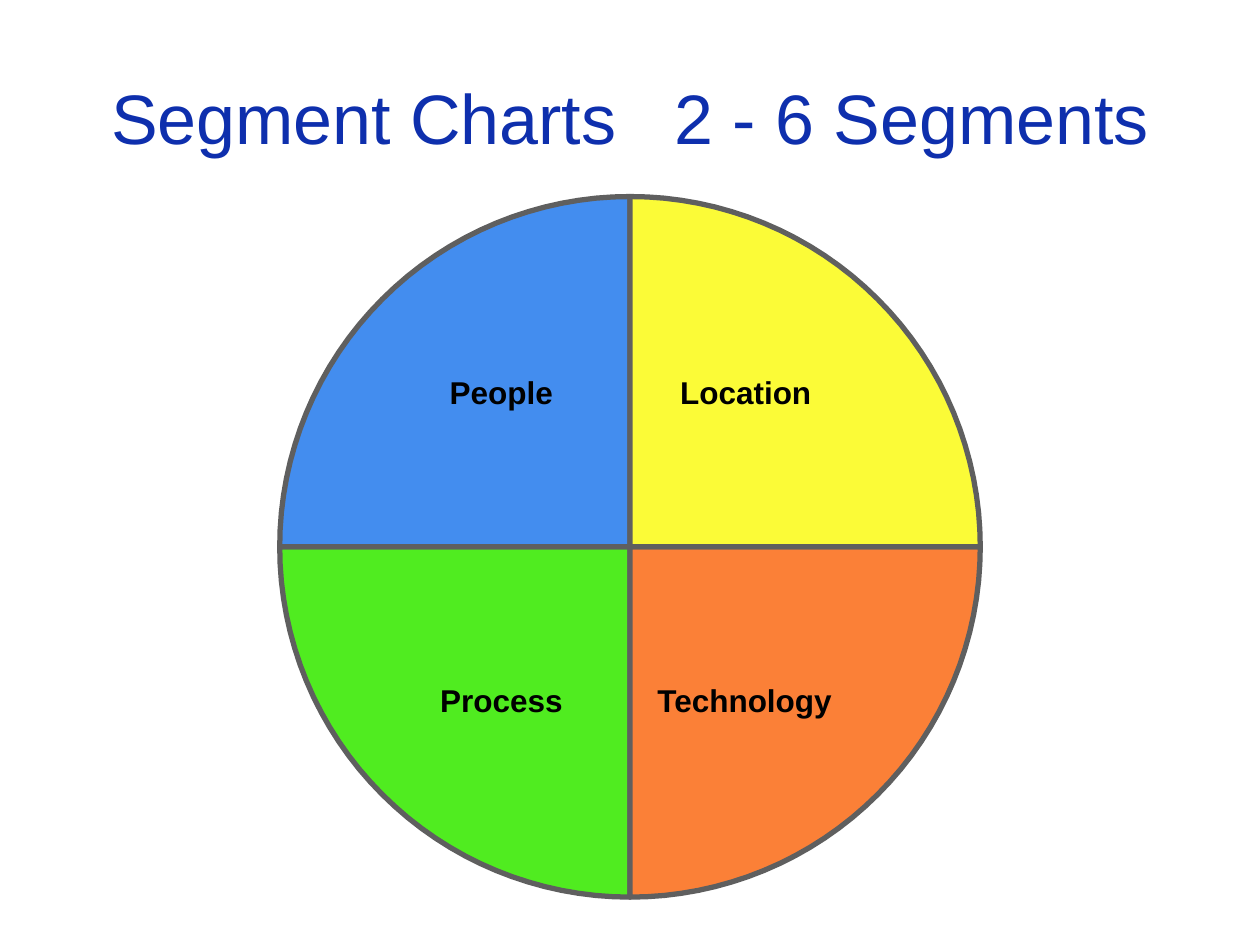
from dataclasses import dataclass
from math import cos, radians, sin

from pptx import Presentation
from pptx.dml.color import RGBColor
from pptx.enum.text import MSO_ANCHOR as Anchor, MSO_AUTO_SIZE as Fit, PP_ALIGN as Align
from pptx.shapes.autoshape import Shape
from pptx.slide import Slide
from pptx.util import Inches, Pt

MID_X, MID_Y, RADIUS = 5, 4.34, 2.78
STEPS = 32
EDGE, INK, TITLE = "5F5F5F", "000000", "0E2FAD"
LABEL_FONT = {"name": "Arial", "size": Pt(18), "bold": True}
TITLE_FONT = {"name": "Arial", "size": Pt(40), "bold": False}


@dataclass(frozen=True)
class Segment:
    label: str
    fill: str
    start: int
    mid: float
    top: float
    width: float


SEGMENTS = [
    Segment("Process", "50EC20", 90, 3.98, 5.36, 1.17),
    Segment("People", "438DEF", 180, 3.98, 2.91, 1.02),
    Segment("Technology", "FB8037", 0, 5.92, 5.36, 1.6),
    Segment("Location", "FBFB37", 270, 5.92, 2.91, 1.24),
]


def color(code: str) -> RGBColor:
    return RGBColor.from_string(code)


def add_wedge(slide: Slide, seg: Segment, sweep: float) -> None:
    angles = [radians(seg.start + sweep * i / STEPS) for i in range(STEPS + 1)]
    arc = [(Inches(MID_X + RADIUS * cos(a)), Inches(MID_Y + RADIUS * sin(a))) for a in angles]
    pen = slide.shapes.build_freeform(Inches(MID_X), Inches(MID_Y))
    pen.add_line_segments(arc, close=True)
    wedge = pen.convert_to_shape()
    wedge.shadow.inherit = False
    wedge.fill.solid()
    wedge.fill.fore_color.rgb = color(seg.fill)
    wedge.line.color.rgb = color(EDGE)
    wedge.line.width = Pt(3)


def add_box(slide: Slide, box: tuple, frame: dict) -> Shape:
    shape = slide.shapes.add_textbox(*map(Inches, box))
    for key, value in frame.items():
        setattr(shape.text_frame, key, value)
    return shape


def add_run(shape: Shape, text: str, style: dict, ink: str, gap: float = 0) -> None:
    run = shape.text_frame.paragraphs[0].add_run()
    run.text = text
    for key, value in style.items():
        setattr(run.font, key, value)
    run.font.color.rgb = color(ink)
    if gap:
        run._r.get_or_add_rPr().set("spc", str(round(gap * 100)))


def add_label(slide: Slide, seg: Segment) -> None:
    box = (seg.mid - seg.width / 2, seg.top, seg.width, 0.4)
    frame = {"word_wrap": False, "auto_size": Fit.SHAPE_TO_FIT_TEXT}
    add_run(add_box(slide, box, frame), seg.label, LABEL_FONT, INK)


def add_title(slide: Slide) -> None:
    frame = {"word_wrap": True, "vertical_anchor": Anchor.MIDDLE}
    shape = add_box(slide, (0.5, 0.3, 9, 1.25), frame)
    shape.text_frame.paragraphs[0].alignment = Align.CENTER
    for text, gap in [("Segment Charts", 0), (" ", 22.2), ("2 - 6 Segments", 0)]:
        add_run(shape, text, TITLE_FONT, TITLE, gap)


def main() -> None:
    """Build a slide with a circle cut into equal labelled segments."""
    deck = Presentation()
    deck.slide_width, deck.slide_height = Inches(10), Inches(7.5)
    slide = deck.slides.add_slide(deck.slide_layouts[6])
    for seg in SEGMENTS:
        add_wedge(slide, seg, 360 / len(SEGMENTS))
    for seg in SEGMENTS:
        add_label(slide, seg)
    add_title(slide)
    deck.save("out.pptx")


if __name__ == "__main__":
    main()
